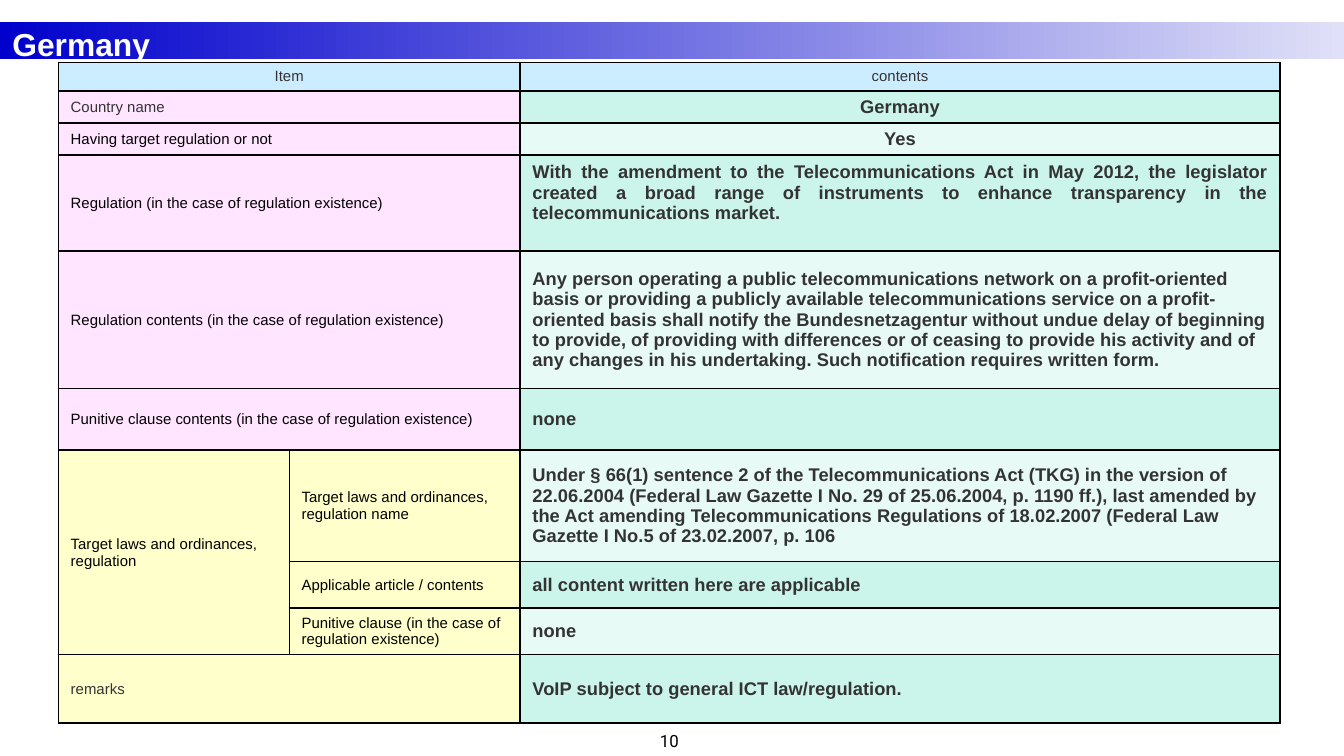
from lxml.etree import SubElement
from pptx import Presentation
from pptx.dml.color import RGBColor
from pptx.enum.shapes import MSO_SHAPE
from pptx.enum.text import MSO_ANCHOR, PP_ALIGN
from pptx.oxml.ns import qn
from pptx.util import Pt

BLACK = RGBColor(0x00, 0x00, 0x00)
WHITE = RGBColor(0xFF, 0xFF, 0xFF)
GREY = RGBColor(0x33, 0x33, 0x33)
BAR_DARK = RGBColor(0x00, 0x00, 0xCC)
BAR_LIGHT = RGBColor(0xE0, 0xE0, 0xF8)
BLUE = RGBColor(0xCC, 0xEC, 0xFF)
PINK = RGBColor(0xFF, 0xE5, 0xFF)
YELLOW = RGBColor(0xFF, 0xFF, 0xCC)
MINT = RGBColor(0xCB, 0xF4, 0xEA)
PALE_MINT = RGBColor(0xE7, 0xFA, 0xF5)

INSET_X, INSET_Y = 6.6, 2.7
COLUMN_WIDTHS = [123.7, 123.7, 407]
LAWS_FIRST, LAWS_LAST = 6, 8

# Each row: height, label, label colour, label fill, contents, alignment
ROWS = [
    (15.3, "Item", GREY, BLUE, "contents", PP_ALIGN.CENTER),
    (16.6, "Country name", GREY, PINK, "Germany", PP_ALIGN.CENTER),
    (16.6, "Having target regulation or not", BLACK, PINK, "Yes", PP_ALIGN.CENTER),
    (50.6, "Regulation (in the case of regulation existence)", BLACK, PINK,
     "With the amendment to the Telecommunications Act in May 2012, the legislator "
     "created a broad range of instruments to enhance transparency in the "
     "telecommunications market.", PP_ALIGN.JUSTIFY),
    (73.7, "Regulation contents (in the case of regulation existence)", BLACK, PINK,
     "Any person operating a public telecommunications network on a profit-oriented "
     "basis or providing a publicly available telecommunications service on a "
     "profit-oriented basis shall notify the Bundesnetzagentur without undue delay of "
     "beginning to provide, of providing with differences or of ceasing to provide his "
     "activity and of any changes in his undertaking. Such notification requires "
     "written form.", PP_ALIGN.LEFT),
    (33, "Punitive clause contents (in the case of regulation existence)", BLACK, PINK,
     "none", PP_ALIGN.LEFT),
    (59.7, "Target laws and ordinances, regulation name", BLACK, YELLOW,
     "Under § 66(1) sentence 2 of the Telecommunications Act (TKG) in the version of "
     "22.06.2004 (Federal Law Gazette I No. 29 of 25.06.2004, p. 1190 ff.), last "
     "amended by the Act amending Telecommunications Regulations of 18.02.2007 "
     "(Federal Law Gazette I No.5 of 23.02.2007, p. 106", PP_ALIGN.LEFT),
    (24.9, "Applicable article / contents", BLACK, YELLOW,
     "all content written here are applicable", PP_ALIGN.LEFT),
    (24.9, "Punitive clause (in the case of regulation existence)", BLACK, YELLOW,
     "none", PP_ALIGN.LEFT),
    (36.7, "remarks", GREY, YELLOW,
     "VoIP subject to general ICT law/regulation.", PP_ALIGN.LEFT),
]


def set_text(frame, text, size, color, bold=False, align=PP_ALIGN.LEFT, font="Arial"):
    paragraph = frame.paragraphs[0]
    paragraph.text = text
    paragraph.alignment = align
    paragraph.font.name = font
    paragraph.font.size = Pt(size)
    paragraph.font.bold = bold
    paragraph.font.color.rgb = color


def set_insets(target):
    target.margin_left = target.margin_right = Pt(INSET_X)
    target.margin_top = target.margin_bottom = Pt(INSET_Y)


def add_text(slide, left, top, width, height, anchor, *text, **style):
    frame = slide.shapes.add_textbox(Pt(left), Pt(top), Pt(width), Pt(height)).text_frame
    frame.word_wrap = True
    frame.vertical_anchor = anchor
    set_insets(frame)
    set_text(frame, *text, **style)


def add_title_bar(slide):
    bar = slide.shapes.add_shape(MSO_SHAPE.RECTANGLE, 0, Pt(12), Pt(720), Pt(19.6))
    bar.shadow.inherit = False
    bar.line.fill.background()
    bar.fill.gradient()
    bar.fill.gradient_angle = 0
    for stop, color in zip(bar.fill.gradient_stops, (BAR_DARK, BAR_LIGHT)):
        stop.color.rgb = color


def set_borders(cell, widths):
    """Draw black borders; widths are left, right, top, bottom."""
    properties = cell._tc.get_or_add_tcPr()
    for index, (side, width) in enumerate(zip(("lnL", "lnR", "lnT", "lnB"), widths)):
        line = SubElement(properties, qn(f"a:{side}"), w=str(Pt(width)))
        fill = SubElement(line, qn("a:solidFill"))
        SubElement(fill, qn("a:srgbClr"), val=str(BLACK))
        properties.remove(line)
        properties.insert(index, line)


def fill_cell(cell, fill, *text, borders=(1, 1, 1, 1), **style):
    cell.vertical_anchor = MSO_ANCHOR.MIDDLE
    set_insets(cell)
    cell.fill.solid()
    cell.fill.fore_color.rgb = fill
    set_text(cell.text_frame, *text, **style)
    set_borders(cell, borders)


def add_regulation_table(slide):
    table = slide.shapes.add_table(
        len(ROWS), len(COLUMN_WIDTHS), Pt(31.3), Pt(33.4),
        Pt(sum(COLUMN_WIDTHS)), Pt(sum(row[0] for row in ROWS))).table
    for column, width in zip(table.columns, COLUMN_WIDTHS):
        column.width = Pt(width)

    for index, (height, label, color, fill, contents, align) in enumerate(ROWS):
        table.rows[index].height = Pt(height)
        is_header = index == 0
        is_law = LAWS_FIRST <= index <= LAWS_LAST

        # Label, across two columns unless it belongs to the laws group
        label_cell = table.cell(index, 1 if is_law else 0)
        if not is_law:
            label_cell.merge(table.cell(index, 1))
        bottom = 0.75 if index == len(ROWS) - 1 else 1
        fill_cell(label_cell, fill, label, 8, color,
                  align=PP_ALIGN.CENTER if is_header else PP_ALIGN.LEFT,
                  borders=(0.75 if is_law else 1, 1, 1, bottom))

        # Contents, in alternating tints below the header
        tint = BLUE if is_header else MINT if index % 2 else PALE_MINT
        fill_cell(table.cell(index, 2), tint, contents, 8 if is_header else 9.8, GREY,
                  bold=not is_header, align=align)

    # Laws group label, and the raised text of the regulation row
    group = table.cell(LAWS_FIRST, 0)
    group.merge(table.cell(LAWS_LAST, 0))
    fill_cell(group, YELLOW, "Target laws and ordinances, regulation", 8, BLACK,
              borders=(1, 0.75, 1, 1))
    table.cell(3, 2).margin_bottom = Pt(13.5)


def main():
    presentation = Presentation()
    presentation.slide_width, presentation.slide_height = Pt(720), Pt(405)
    slide = presentation.slides.add_slide(presentation.slide_layouts[6])

    add_title_bar(slide)
    add_text(slide, 296.6, 390, 124, 15, MSO_ANCHOR.BOTTOM, "10", 9, BLACK,
             align=PP_ALIGN.CENTER, font="Roboto")
    add_text(slide, 0, 10.4, 140, 24, MSO_ANCHOR.TOP, "Germany", 17, WHITE, bold=True)
    add_regulation_table(slide)

    presentation.save("out.pptx")


if __name__ == "__main__":
    main()
